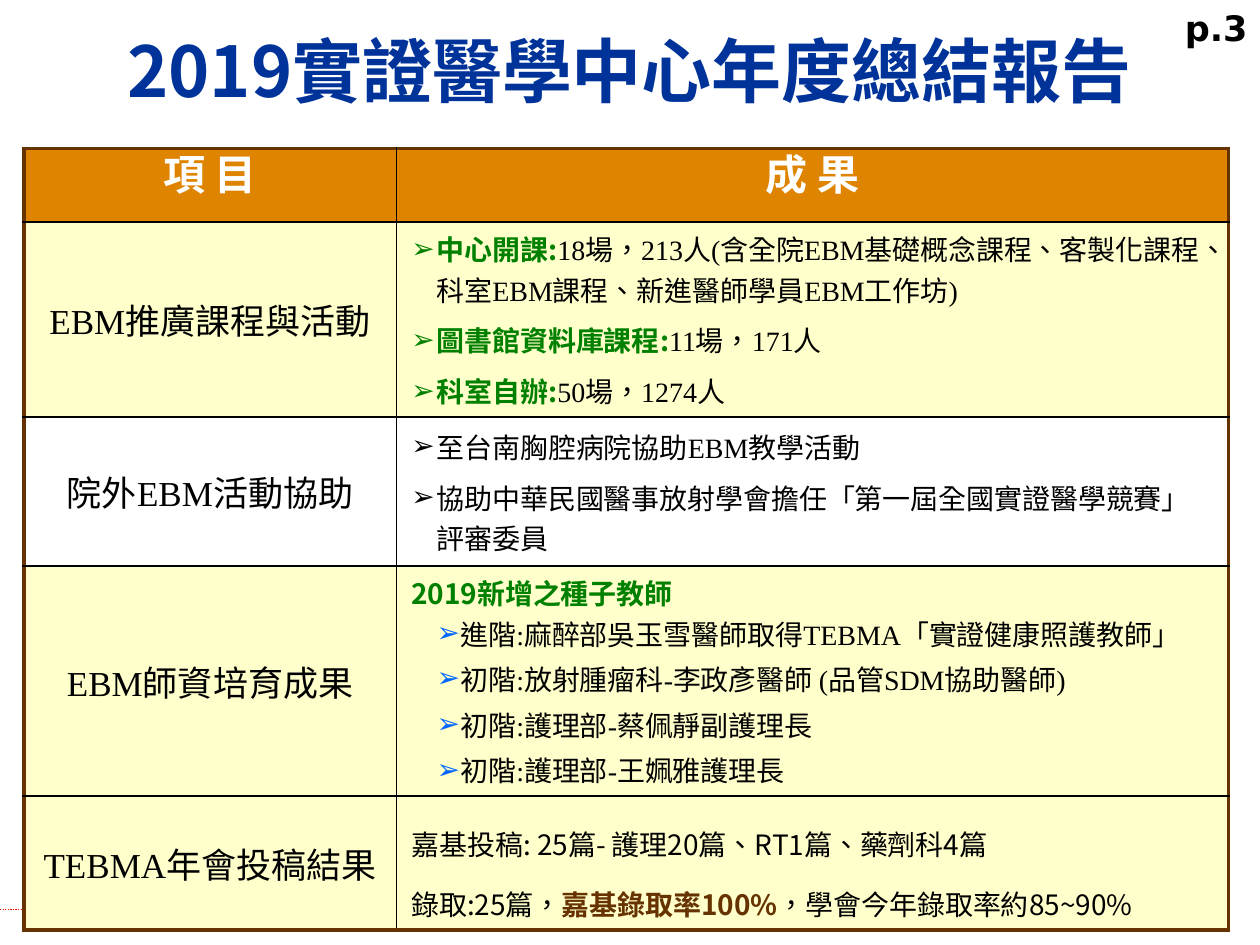
"""Build the yearly report slide of the evidence-based medicine centre."""
from lxml import etree
from pptx import Presentation
from pptx.dml.color import RGBColor
from pptx.enum.dml import MSO_LINE
from pptx.enum.shapes import MSO_CONNECTOR
from pptx.enum.text import MSO_ANCHOR, PP_ALIGN
from pptx.oxml.ns import qn
from pptx.util import Pt

LEFT, MID, RIGHT = PP_ALIGN.LEFT, PP_ALIGN.CENTER, PP_ALIGN.RIGHT
CENTRE, TOP = MSO_ANCHOR.MIDDLE, MSO_ANCHOR.TOP
DOT, STRAIGHT = MSO_LINE.ROUND_DOT, MSO_CONNECTOR.STRAIGHT
SANS, SERIF, LATIN = "Noto Sans CJK SC", "Times New Roman", "DejaVu Sans"
HUES = {
    "black": "000000", "white": "FFFFFF", "navy": "003399", "green": "008000",
    "brown": "663300", "orange": "DE8400", "cream": "FFFFCC",
    "blue": "0066FF", "red": "FF0000",
}


def write(para, text, size=16, font=SERIF, hue="black", bold=False):
    run = para.add_run()
    run.text = text
    run.font.size = Pt(size)
    run.font.bold = bold
    run.font.name = font
    run.font.color.rgb = RGBColor.from_string(HUES[hue])
    props = run.font._element
    props.set("lang", "zh-TW")
    etree.SubElement(props, qn("a:ea")).set("typeface", SANS)


def edge(cell, sides):
    props = cell._tc.get_or_add_tcPr()
    for spot, (side, thick) in enumerate(sides):
        line = etree.Element(qn("a:ln" + side))
        line.set("w", str(Pt(2.25 if thick else 1)))
        fill = etree.SubElement(line, qn("a:solidFill"))
        tint = etree.SubElement(fill, qn("a:srgbClr"))
        tint.set("val", HUES["brown" if thick else "black"])
        props.insert(spot, line)


deck = Presentation()
deck.slide_width, deck.slide_height = Pt(720), Pt(540)
slide = deck.slides.add_slide(deck.slide_layouts[6])
shapes = slide.shapes

rule = shapes.add_connector(STRAIGHT, Pt(0), Pt(519.8), Pt(546.5), Pt(519.8))
rule.line.fill.solid()
rule.line.fill.fore_color.rgb = RGBColor.from_string(HUES["red"])
rule.line.width = Pt(0.75)
rule.line.dash_style = DOT
etree.SubElement(rule._element.spPr, qn("a:effectLst"))

heads = [
    ((642.2, 0, 77.8, 36), "p.3", RIGHT, TOP,
     {"size": 20, "font": LATIN, "bold": True}),
    ((44.6, 9.4, 630, 60.5), "2019實證醫學中心年度總結報告", MID, CENTRE,
     {"size": 40, "font": SANS, "hue": "navy", "bold": True}),
]
for place, text, align, anchor, look in heads:
    box = shapes.add_textbox(*[Pt(v) for v in place])
    frame = box.text_frame
    frame.word_wrap = True
    frame.vertical_anchor = anchor
    para = frame.paragraphs[0]
    para.alignment = align
    write(para, text, **look)

head = {"size": 24, "hue": "white", "bold": True}
topic = {"size": 20}
key = {"font": SANS, "hue": "green", "bold": True}
sans = {"font": SANS}
rate = {"font": SANS, "hue": "brown", "bold": True}

kinds = {
    "head": {"align": MID, "space": Pt(20)},
    "topic": {"align": MID},
    "plain": {},
    "wide": {"space": 1.5},
    "item": {"left": 14.4, "hang": 14.4, "after": 6},
    "sub": {"left": 28.1, "hang": 13.7, "after": 3, "mark": "blue"},
}
rows = [
    (41.8, "orange", [("head", [("項 目", head)])], [("head", [("成 果", head)])]),
    (111.6, "cream", [("topic", [("EBM推廣課程與活動", topic)])], [
        ("item", [("中心開課:", key),
                  ("18場，213人(含全院EBM基礎概念課程、客製化課程、"
                   "科室EBM課程、新進醫師學員EBM工作坊)", {})]),
        ("item", [("圖書館資料庫課程:", key), ("11場，171人", {})]),
        ("item", [("科室自辦:", key), ("50場，1274人", {})]),
    ]),
    (85, "white", [("topic", [("院外EBM活動協助", topic)])], [
        ("item", [("至台南胸腔病院協助EBM教學活動", {})]),
        ("item", [("協助中華民國醫事放射學會擔任「第一屆全國實證醫學競賽」評審委員", {})]),
    ]),
    (131.6, "cream", [("topic", [("EBM師資培育成果", topic)])], [
        ("plain", [("2019新增之種子教師", key)]),
        ("sub", [("進階:麻醉部吳玉雪醫師取得TEBMA「實證健康照護教師」", {})]),
        ("sub", [("初階:放射腫瘤科-李政彥醫師 (品管SDM協助醫師)", {})]),
        ("sub", [("初階:護理部-蔡佩靜副護理長", {})]),
        ("sub", [("初階:護理部-王姵雅護理長", {})]),
    ]),
    (76.4, "cream", [("topic", [("TEBMA年會投稿結果", topic)])], [
        ("wide", [("嘉基投稿: 25篇- 護理20篇、RT1篇、藥劑科4篇", sans)]),
        ("wide", [("錄取:25篇，", sans), ("嘉基錄取率100%", rate),
                  ("，學會今年錄取率約85~90%", sans)]),
    ]),
]

tall = sum(row[0] for row in rows)
grid = shapes.add_table(len(rows), 2, Pt(13.7), Pt(85), Pt(688.3), Pt(tall)).table
grid.first_row = grid.horz_banding = False
grid.columns[0].width, grid.columns[1].width = Pt(212.8), Pt(475.5)
last = len(rows) - 1

for r, (high, shade, *cells) in enumerate(rows):
    grid.rows[r].height = Pt(high)
    for c, paras in enumerate(cells):
        cell = grid.cell(r, c)
        cell.fill.solid()
        cell.fill.fore_color.rgb = RGBColor.from_string(HUES[shade])
        edge(cell, [("L", c == 0), ("R", c == 1), ("T", r == 0), ("B", r == last)])
        cell.vertical_anchor = CENTRE
        inset = (7.2, 7.2) if r == 0 else [(5.8, 5.8), (8.6, 7.2)][c]
        cell.margin_left, cell.margin_right = [Pt(v) for v in inset]
        cell.margin_top = cell.margin_bottom = Pt(3.6)
        frame = cell.text_frame
        for n, (kind, runs) in enumerate(paras):
            para = frame.add_paragraph() if n else frame.paragraphs[0]
            rules = kinds[kind]
            para.alignment = rules.get("align", LEFT)
            if "space" in rules:
                para.line_spacing = rules["space"]
            if "hang" in rules:
                para.space_after = Pt(rules["after"])
                props = para._p.get_or_add_pPr()
                props.set("marL", str(Pt(rules["left"])))
                props.set("indent", str(-Pt(rules["hang"])))
                if "mark" in rules:
                    tint = etree.SubElement(props, qn("a:buClr"))
                    etree.SubElement(tint, qn("a:srgbClr")).set("val", HUES[rules["mark"]])
                etree.SubElement(props, qn("a:buFont")).set("typeface", LATIN)
                etree.SubElement(props, qn("a:buChar")).set("char", "➢")
            for text, look in runs:
                write(para, text, **look)

deck.save("out.pptx")
